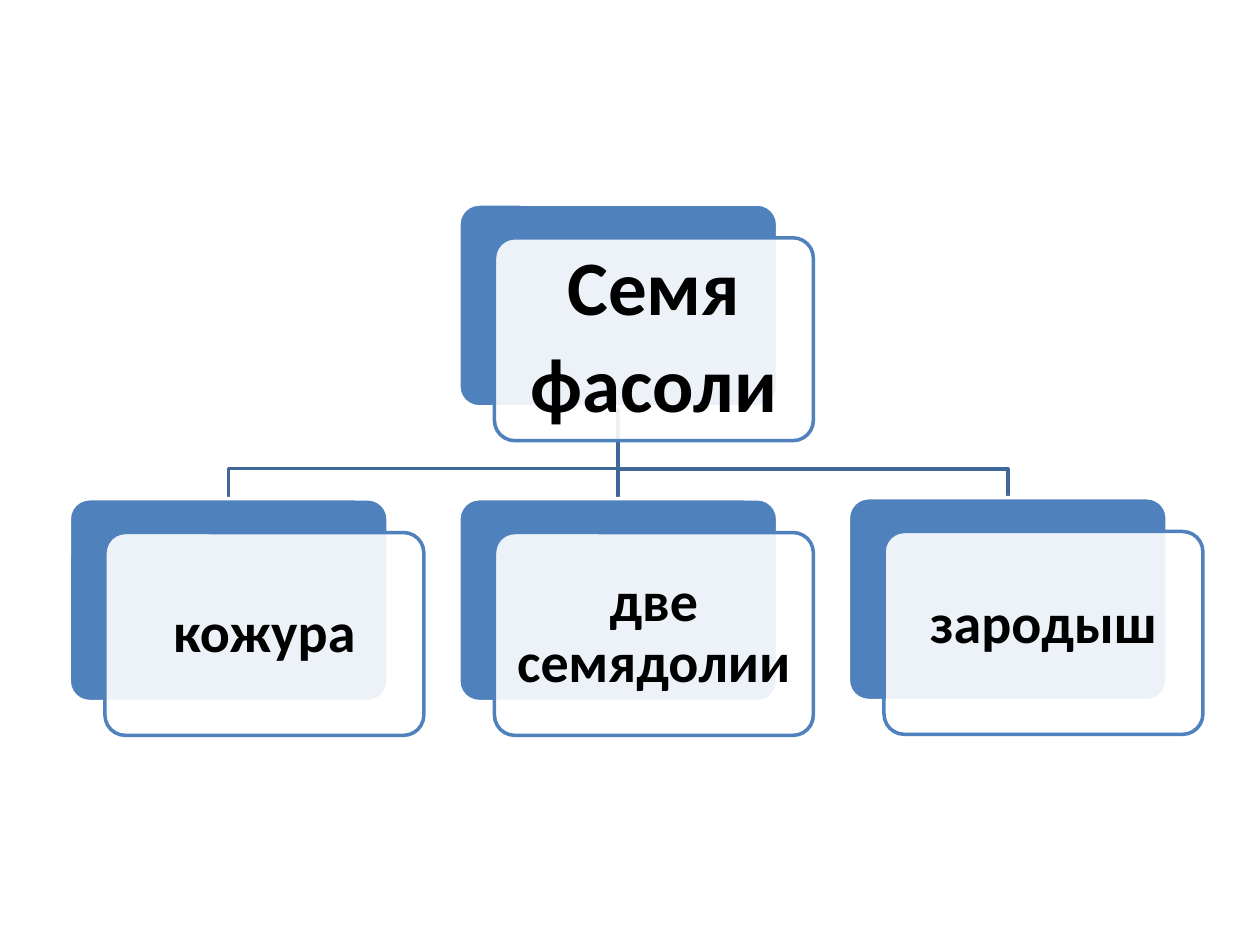
from dataclasses import dataclass

from lxml import etree
from pptx import Presentation
from pptx.dml.color import RGBColor
from pptx.enum.shapes import MSO_CONNECTOR, MSO_SHAPE
from pptx.enum.text import MSO_ANCHOR, PP_ALIGN
from pptx.oxml.ns import qn
from pptx.util import Pt

ROUNDED = MSO_SHAPE.ROUNDED_RECTANGLE
STRAIGHT = MSO_CONNECTOR.STRAIGHT
MIDDLE = MSO_ANCHOR.MIDDLE
CENTER = PP_ALIGN.CENTER


@dataclass(frozen=True)
class Theme:
    font: str = "Calibri"
    accent: RGBColor = RGBColor(0x4F, 0x81, 0xBD)
    branch: RGBColor = RGBColor(0x3F, 0x67, 0x97)
    white: RGBColor = RGBColor(0xFF, 0xFF, 0xFF)
    text: RGBColor = RGBColor(0, 0, 0)
    root_size: float = 44
    child_size: float = 32
    line_width: float = 2
    card_opacity: int = 90


@dataclass(frozen=True)
class Node:
    lines: tuple[str, ...]
    left: float
    top: float
    size: float
    inset: float
    line_spacing: float = 0.9
    space_after: float = 0
    bottom_inset: float = 0

    @property
    def center(self) -> float:
        return self.left + NODE_WIDTH / 2


THEME = Theme()

# Layout in points
NODE_WIDTH, NODE_HEIGHT = 182.2, 115.9
CARD_SHIFT_X, CARD_SHIFT_Y = 20.4, 19.3
FIRST_LEFT, COLUMN_STEP = 39.6, 222.6
ROOT_TOP, CHILD_TOP = 116.6, 285
BRANCH_Y = 267.9

ROOT = Node(("Семя", "фасоли"), FIRST_LEFT + COLUMN_STEP, ROOT_TOP,
            THEME.root_size, 13, space_after=8)
CHILDREN = (
    Node(("кожура",), FIRST_LEFT, CHILD_TOP, THEME.child_size, 9.4),
    Node(("две семядолии",), FIRST_LEFT + COLUMN_STEP, CHILD_TOP,
         THEME.child_size, 9.4),
    Node(("зародыш",), FIRST_LEFT + 2 * COLUMN_STEP, CHILD_TOP - 0.6,
         THEME.child_size, 9.4, line_spacing=1, bottom_inset=13.7),
)


def style_branch(shape) -> None:
    shape.line.color.rgb = THEME.branch
    shape.line.width = Pt(THEME.line_width)


def draw_branch(slide, parent: Node, child: Node) -> None:
    start_y = parent.top + NODE_HEIGHT
    if child.left == parent.left:
        connector = slide.shapes.add_connector(
            STRAIGHT, Pt(parent.center), Pt(start_y), Pt(child.center), Pt(child.top))
        style_branch(connector)
        etree.SubElement(connector._element.spPr, qn("a:effectLst"))
        return
    builder = slide.shapes.build_freeform(Pt(parent.center), Pt(start_y))
    corners = ((parent.center, BRANCH_Y), (child.center, BRANCH_Y),
               (child.center, child.top))
    builder.add_line_segments([(Pt(x), Pt(y)) for x, y in corners], close=False)
    elbow = builder.convert_to_shape()
    elbow.fill.background()
    elbow.shadow.inherit = False
    style_branch(elbow)


def add_box(slide, left: float, top: float, fill: RGBColor, line: RGBColor):
    shape = slide.shapes.add_shape(
        ROUNDED, Pt(left), Pt(top), Pt(NODE_WIDTH), Pt(NODE_HEIGHT))
    shape.adjustments[0] = 0.1
    shape.shadow.inherit = False
    shape.fill.solid()
    shape.fill.fore_color.rgb = fill
    shape.line.color.rgb = line
    shape.line.width = Pt(THEME.line_width)
    return shape


def draw_node(slide, node: Node) -> None:
    add_box(slide, node.left, node.top, THEME.accent, THEME.white)
    card = add_box(slide, node.left + CARD_SHIFT_X, node.top + CARD_SHIFT_Y,
                   THEME.white, THEME.accent)
    color = card._element.spPr.find(qn("a:solidFill")).find(qn("a:srgbClr"))
    etree.SubElement(color, qn("a:alpha"), val=str(THEME.card_opacity * 1000))

    # Label
    text_frame = card.text_frame
    text_frame.word_wrap = True
    text_frame.vertical_anchor = MIDDLE
    text_frame.margin_left = text_frame.margin_right = Pt(node.inset)
    text_frame.margin_top = Pt(0)
    text_frame.margin_bottom = Pt(node.bottom_inset)
    text_frame.text = "\n".join(node.lines)
    for paragraph in text_frame.paragraphs:
        paragraph.alignment = CENTER
        paragraph.line_spacing = node.line_spacing
        paragraph.space_after = Pt(node.space_after)
        for run in paragraph.runs:
            run.font.name = THEME.font
            run.font.size = Pt(node.size)
            run.font.bold = True
            run.font.color.rgb = THEME.text


def main() -> None:
    presentation = Presentation()
    presentation.slide_width, presentation.slide_height = Pt(720), Pt(540)
    slide = presentation.slides.add_slide(presentation.slide_layouts[6])

    # Branches lie behind the nodes
    for child in reversed(CHILDREN):
        draw_branch(slide, ROOT, child)
    for node in (ROOT, *CHILDREN):
        draw_node(slide, node)

    presentation.save("out.pptx")


if __name__ == "__main__":
    main()
